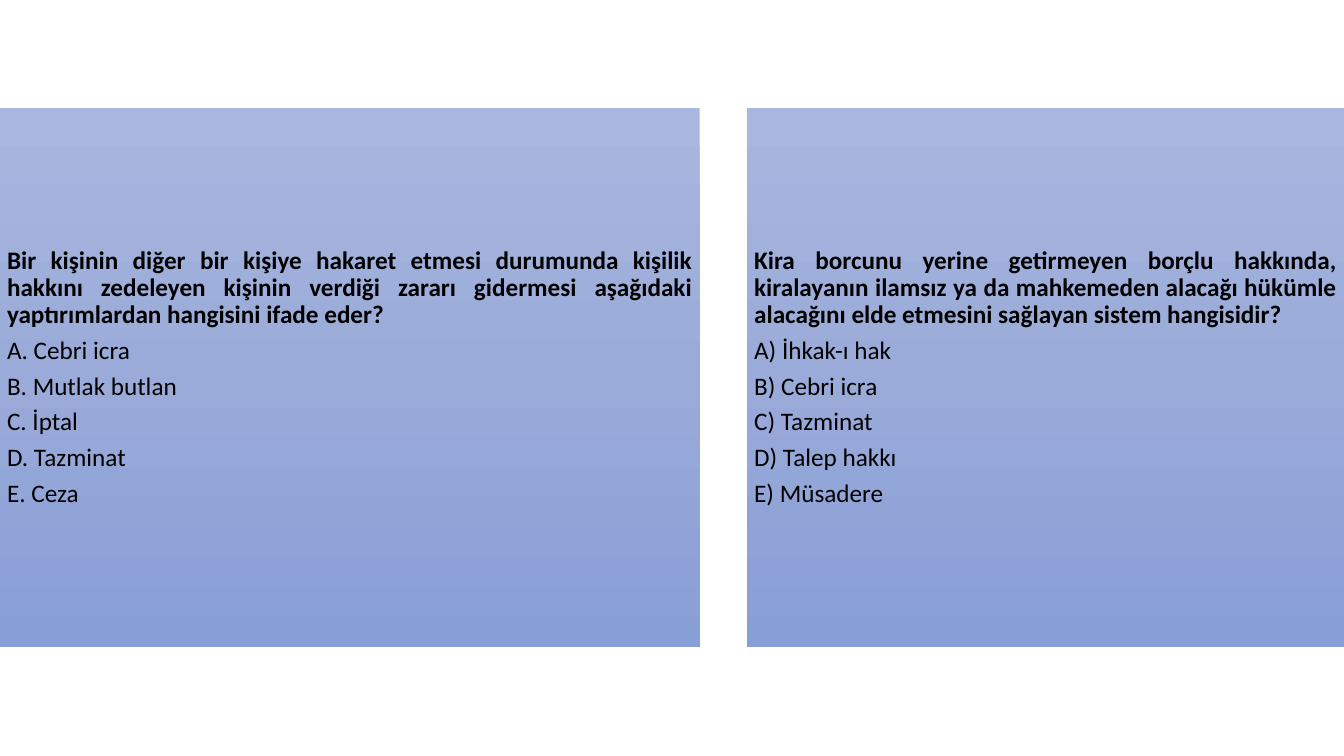
"""Build a slide with two multiple-choice law questions on shaded panels."""
from copy import deepcopy
from pptx import Presentation
from pptx import util as u
from pptx.dml.color import RGBColor
from pptx.enum import shapes, text
from pptx.oxml.ns import qn

COLORS = {"top": "A8B7DF", "middle": "9AABD9", "bottom": "889ED7", "text": "000000"}
PANELS = [
    (0, 6.94, ". ",
     "Bir kişinin diğer bir kişiye hakaret etmesi durumunda kişilik hakkını zedeleyen "
     "kişinin verdiği zararı gidermesi aşağıdaki yaptırımlardan hangisini ifade eder?",
     ["Cebri icra", "Mutlak butlan", "İptal", "Tazminat", "Ceza"]),
    (7.41, 5.92, ") ",
     "Kira borcunu yerine getirmeyen borçlu hakkında, kiralayanın ilamsız ya da mahkemeden "
     "alacağı hükümle alacağını elde etmesini sağlayan sistem hangisidir?",
     ["İhkak-ı hak", "Cebri icra", "Tazminat", "Talep hakkı", "Müsadere"]),
]

deck = Presentation()
deck.slide_width, deck.slide_height = u.Inches(13.33), u.Inches(7.5)
slide = deck.slides.add_slide(deck.slide_layouts[6])

for left, width, mark, question, answers in PANELS:
    panel = slide.shapes.add_shape(
        shapes.MSO_SHAPE.RECTANGLE, u.Inches(left), u.Inches(1.07), u.Inches(width), u.Inches(5.35))
    panel.shadow.inherit = False
    panel.line.fill.background()
    panel.fill.gradient()
    panel.fill.gradient_angle = 270
    stops = panel._element.spPr.find(qn("a:gradFill")).find(qn("a:gsLst"))
    stops.insert(1, deepcopy(stops[0]))
    for stop, place, name in zip(panel.fill.gradient_stops, (0, 0.5, 1), ("top", "middle", "bottom")):
        stop.position = place
        stop.color.rgb = RGBColor.from_string(COLORS[name])

    frame = panel.text_frame
    frame.word_wrap = True
    frame.vertical_anchor = text.MSO_ANCHOR.MIDDLE
    frame.margin_left = frame.margin_right = frame.margin_top = frame.margin_bottom = u.Inches(0.07)
    lines = [question] + [letter + mark + answer for letter, answer in zip("ABCDE", answers)]
    for index, line in enumerate(lines):
        para = frame.add_paragraph() if index else frame.paragraphs[0]
        para.text = line
        para.alignment = text.PP_ALIGN.JUSTIFY
        para.line_spacing = 0.9
        para.space_after = u.Pt(6)
        para.font.name = "Calibri"
        para.font.size = u.Pt(18)
        para.font.bold = index == 0
        para.font.color.rgb = RGBColor.from_string(COLORS["text"])

deck.save("out.pptx")
